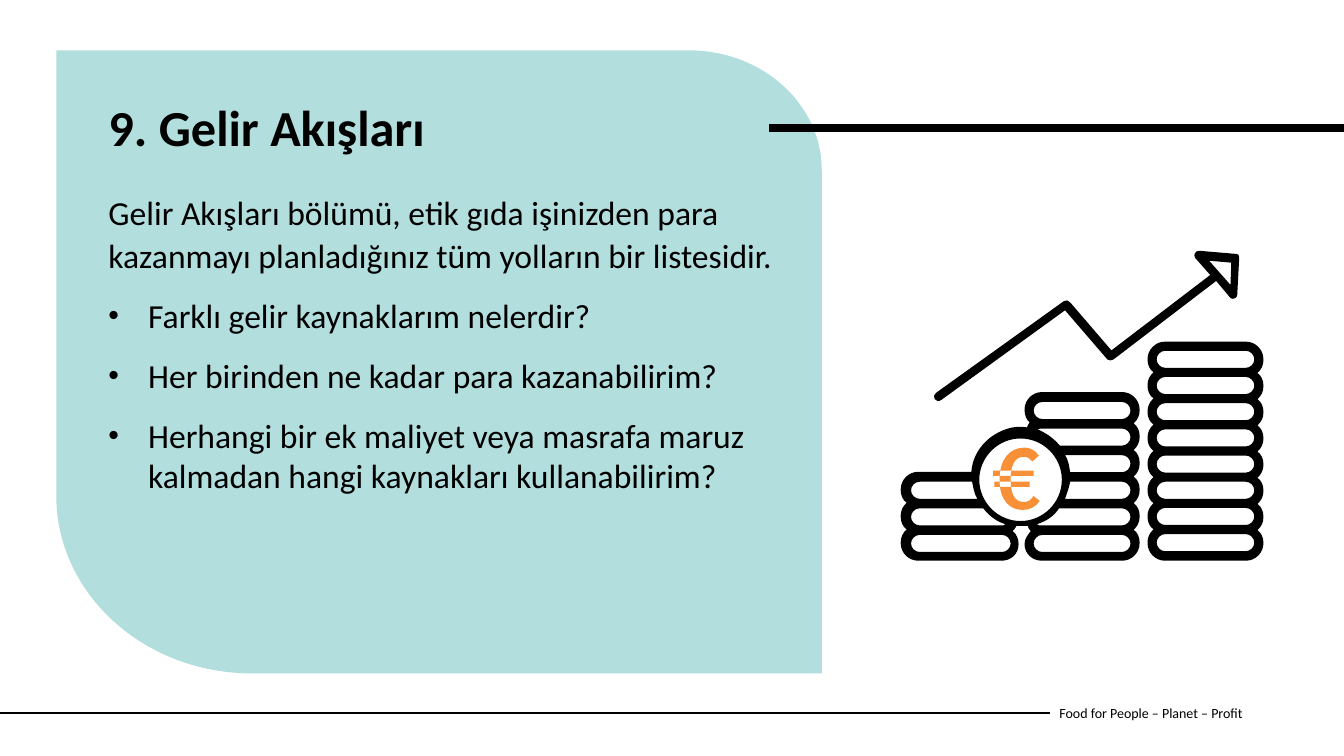
from lxml import etree
from pptx import Presentation
from pptx.dml.color import RGBColor
from pptx.enum.shapes import MSO_CONNECTOR as CONN
from pptx.enum.text import MSO_ANCHOR as ANCHOR, MSO_AUTO_SIZE as AUTO, PP_ALIGN as ALIGN
from pptx.oxml.ns import qn
from pptx.util import Cm, Pt

COLORS = {"ink": "000000", "panel": "B2DEDD", "euro": "F79037"}
FONT = "Calibri"
SLIDE_W, SLIDE_H = 33.87, 19.05
COIN_H, HOLE_H, HOLE_TOP = 0.9, 0.43, 0.25  # coins of the icon, cm

INTRO = ("Gelir Akışları bölümü, etik gıda işinizden para kazanmayı "
         "planladığınız tüm yolların bir listesidir.")
QUESTIONS = [
    "Farklı gelir kaynaklarım nelerdir?",
    "Her birinden ne kadar para kazanabilirim?",
    "Herhangi bir ek maliyet veya masrafa maruz kalmadan hangi kaynakları kullanabilirim?",
]


def rgb(name):
    return RGBColor.from_string(COLORS[name])


def shift(steps, dx, dy, sign=1):
    """Move steps; sign -1 also turns them by half a circle."""
    return [tuple(sign * v + (dy if i % 2 else dx) for i, v in enumerate(step))
            for step in steps]


def add_outline(slide, left, top, contours, color):
    """Contours hold (x, y) corners and (x1, y1, x2, y2, x, y) curves."""
    contours = [[tuple(Cm(v) for v in step) for step in shift(steps, left, top)]
                for steps in contours]
    fb = slide.shapes.build_freeform(*contours[0][0], scale=1.0)
    for i, steps in enumerate(contours):
        if i:
            fb.move_to(*steps[0])
        fb.add_line_segments([step[-2:] for step in steps[1:]], close=True)
    sp = fb.convert_to_shape()
    # Bend the segments that are curves
    nodes = list(sp._element.iter(qn("a:moveTo"), qn("a:lnTo")))
    for node, step in zip(nodes, sum(contours, [])):
        if len(step) == 6:
            node.tag = qn("a:cubicBezTo")
            for j in (0, 2):
                pt = etree.Element(qn("a:pt"), x=str(step[j] - sp.left),
                                   y=str(step[j + 1] - sp.top))
                node.insert(j // 2, pt)
    sp.shadow.inherit = False
    sp.fill.solid()
    sp.fill.fore_color.rgb = rgb(color)
    sp.line.fill.background()
    return sp


def place(sp, left, top, width, height):
    sp.left, sp.top, sp.width, sp.height = Cm(left), Cm(top), Cm(width), Cm(height)
    tf = sp.text_frame
    tf.word_wrap = True
    tf.auto_size = AUTO.NONE
    return tf


def add_text(p, text, size, bold=False):
    p.alignment = ALIGN.LEFT
    r = p.add_run()
    r.text = text
    r.font.name, r.font.size, r.font.bold = FONT, Pt(size), bold
    r.font.color.rgb = rgb("ink")


def set_bullet(p, char=None, indent=0):
    pPr = p._p.get_or_add_pPr()
    pPr.set("marL", str(Cm(indent)))
    pPr.set("indent", str(-Cm(indent)))
    if char:
        etree.SubElement(pPr, qn("a:buSzPct"), val="90000")
        etree.SubElement(pPr, qn("a:buFont"), typeface="Arial")
        etree.SubElement(pPr, qn("a:buChar"), char=char)
    else:
        etree.SubElement(pPr, qn("a:buNone"))


def add_footer(slide, left, top, width, height):
    sp = slide.shapes.add_textbox(0, 0, 0, 0)
    tf = place(sp, left, top, width, height)
    tf.vertical_anchor = ANCHOR.MIDDLE
    add_text(tf.paragraphs[0], "Food for People – Planet – Profit", 10)
    y = Cm(top + height / 2)
    rule = slide.shapes.add_connector(CONN.STRAIGHT, 0, y, Cm(left), y)
    rule.end_connect(sp, 1)
    rule.line.color.rgb = rgb("ink")
    rule.line.width = Pt(1.5)
    etree.SubElement(rule._element.spPr, qn("a:effectLst"))


def add_panel(slide, left, top, w, h):
    # Two opposite corners are rounded
    add_outline(slide, left, top, [[
        (w, h), (4.93, h), (2.21, h, 0, h - 2.01, 0, h - 4.47), (0, 0),
        (w - 3.35, 0), (w - 1.5, 0, w, 1.35, w, 3.02)]], "panel")
    # Bar running to the slide edge
    x, length = left + w - 1.29, SLIDE_W - left - w + 1.29
    bar = add_outline(slide, x, top + 1.9,
                      [[(0, 0), (length, 0), (length, 0.13), (0, 0.13)]], "ink")
    bar.line.color.rgb = rgb("ink")
    bar.line.width = Pt(1.93)
    etree.SubElement(bar.line._get_or_add_ln(), qn("a:miter"), lim="800000")


def add_content(slide, left, top, width):
    # Title
    tf = place(slide.shapes.title, left, top, 13.87, 2.1)
    tf.vertical_anchor = ANCHOR.TOP
    p = tf.paragraphs[0]
    p.line_spacing = 0.9
    add_text(p, "9. Gelir Akışları", 36, bold=True)
    # Introduction and questions
    tf = place(slide.placeholders[1], left, top + 2.17, width, 8.41)
    tf.vertical_anchor = ANCHOR.TOP
    p = tf.paragraphs[0]
    set_bullet(p)
    p.line_spacing, p.space_before, p.space_after = 1.07, Pt(0), Pt(8)
    add_text(p, INTRO, 24)
    for question in QUESTIONS:
        p = tf.add_paragraph()
        set_bullet(p, "•", 1)
        p.line_spacing, p.space_before, p.space_after = 1.0, Pt(6), Pt(8)
        add_text(p, question, 24)


def stack_side(count, pitch):
    """Left edge of a stack, downwards, with a notch between coins."""
    steps = [(0.44, 0), (0.2, 0, 0, 0.2, 0, 0.44)]
    for i in range(1, count):
        y = i * pitch
        steps += [(0, y - 0.2), (0, y - 0.08, 0.05, y + 0.04, 0.15, y + 0.11),
                  (0.05, y + 0.2, 0, y + 0.31, 0, y + 0.43)]
    y = (count - 1) * pitch
    return steps + [(0, y + 0.46), (0, y + 0.7, 0.2, y + COIN_H, 0.44, y + COIN_H)]


def coin_hole(x1, x2, top, left_end=None, right_end=None):
    h, r = HOLE_H, HOLE_H / 2
    cap = [(r, h), (0.1, h, 0, h - 0.1, 0, r), (0, 0.1, 0.1, 0, r, 0)]
    return shift((left_end or shift(cap, x1, 0))
                 + (right_end or shift(cap, x2, h, -1)), 0, top)


def tall_stack(x1, x2, top, count, pitch):
    side = stack_side(count, pitch)
    bottom = top + (count - 1) * pitch + COIN_H
    holes = [coin_hole(x1 + 0.23, x2 - 0.23, top + i * pitch + HOLE_TOP - 0.02)
             for i in range(count)]
    return [shift(side, x1, top) + shift(side, x2, bottom, -1)] + holes


def joined_stacks(top, pitch):
    """Three-coin and six-coin stacks with the round coin in front."""
    h, x2 = HOLE_H, 6.02
    low, bottom = top + 3 * pitch, top + 5 * pitch + COIN_H
    silhouette = [
        (5.58, top), (3.56, top), (3.32, top, 3.12, 3.76, 3.12, 4),
        (3.12, 4.14, 3.17, 4.27, 3.25, 4.32), (3.23, 4.35, 3.2, 4.4, 3.18, 4.45),
        (2.82, 4.39, 2.51, 4.52, 2.24, 4.72), (1.98, 4.93, 1.8, 5.23, 1.78, low)]
    silhouette += shift(stack_side(3, pitch), 0, low)
    silhouette += [
        (2.54, bottom), (2.77, bottom, 2.97, 7.65, 2.97, 7.39),
        (2.97, 7.26, 2.92, 7.14, 2.82, 7.06), (2.84, 7.04, 2.9, 6.99, 2.92, 6.93),
        (3.2, 6.93), (3.23, 6.99, 3.23, 7.04, 3.28, 7.06),
        (3.2, 7.16, 3.12, 7.26, 3.12, 7.39), (3.12, 7.62, 3.3, bottom, 3.56, bottom)]
    silhouette += shift(stack_side(6, pitch), x2, bottom, -1)
    # Hole ends cut off by the round coin, by coin number
    left_cuts = {
        1: [(4.01, h), (3.86, 0.25, 3.68, 0.12, 3.45, 0.02), (3.48, 0, 3.53, 0, 3.58, 0)],
        2: [(4.27, h), (4.24, 0.25, 4.22, 0.1, 4.14, 0)],
        3: [(4.14, h), (4.19, 0.3, 4.24, 0.15, 4.27, 0)],
        4: [(3.56, h), (3.51, h, 3.45, h, 3.43, 0.4), (3.66, 0.33, 3.86, 0.2, 3.99, 0)]}
    right_cuts = {
        3: [(1.8, 0), (1.83, 0.15, 1.85, 0.3, 1.93, h)],
        4: [(2.08, 0), (2.24, 0.2, 2.41, 0.33, 2.64, 0.4), (2.62, h, 2.57, h, 2.54, h)]}
    tops = [top + i * pitch + HOLE_TOP for i in range(6)]
    holes = [coin_hole(3.35, 5.79, y, left_end=left_cuts.get(i))
             for i, y in enumerate(tops)]
    holes += [coin_hole(0.26, 2.77, tops[i], right_end=right_cuts.get(i))
              for i in range(3, 6)]
    r, k = 1.04, 0.57
    half = [(0, -r), (k, -r, r, -k, r, 0), (r, k, k, r, 0, r)]
    face = shift(half + shift(half, 0, 0, -1)[1:], 3.02, 5.77)
    return [silhouette, face] + holes


def euro_sign():
    bars = [[(x1, y), (x2, y), (x2, y + 0.13), (x1, y + 0.13)]
            for x1, x2, y in [(-0.69, 0.33, -0.23), (-0.66, 0.23, 0.05)]]
    letter = [(-0.53, 0), (-0.53, -0.51, -0.28, -0.81, 0.1, -0.81),
              (0.23, -0.81, 0.38, -0.74, 0.46, -0.61), (0.3, -0.46),
              (0.23, -0.53, 0.18, -0.58, 0.08, -0.58),
              (-0.15, -0.58, -0.25, -0.36, -0.25, 0), (-0.25, 0.36, -0.15, 0.56, 0.08, 0.56),
              (0.2, 0.56, 0.25, 0.51, 0.33, 0.41), (0.48, 0.53),
              (0.38, 0.69, 0.23, 0.76, 0.05, 0.76), (-0.28, 0.76, -0.53, 0.51, -0.53, 0)]
    return bars + [letter]


def rising_arrow():
    return [[(4.27, 1.3), (4.22, 1.24, 4.17, 1.24, 4.11, 1.27), (0.89, 3.58),
             (0.76, 3.66, 0.89, 3.86, 1.02, 3.76), (4.14, 1.5), (5.21, 2.74),
             (5.26, 2.77, 5.31, 2.77, 5.36, 2.74), (7.95, 0.76), (8.31, 1.19),
             (8.36, 1.24, 8.48, 1.19, 8.48, 1.12), (8.53, 0.18),
             (8.53, 0.1, 8.51, 0.08, 8.46, 0.08), (7.52, 0),
             (7.42, 0, 7.37, 0.1, 7.42, 0.18), (7.8, 0.61), (5.31, 2.51)],
            [(7.77, 0.25), (8.33, 0.3), (8.31, 0.86)]]


def add_growth_icon(slide, left, top):
    add_outline(slide, left, top, tall_stack(6.22, 9.14, 2.29, 8, 0.66), "ink")
    add_outline(slide, left, top, rising_arrow(), "ink")
    add_outline(slide, left, top, joined_stacks(3.56, 0.67), "ink")
    add_outline(slide, left + 3.02, top + 5.77, euro_sign(), "euro")


def main():
    prs = Presentation()
    prs.slide_width, prs.slide_height = Cm(SLIDE_W), Cm(SLIDE_H)
    slide = prs.slides.add_slide(prs.slide_layouts[1])
    add_footer(slide, 26.45, 17.45, 6.93, 1.02)
    add_panel(slide, 1.42, 1.27, 19.29, 15.7)
    add_content(slide, 2.48, 2.46, 18.21)
    # Title and body lie above the panel
    for sp in list(slide.placeholders):
        slide.shapes._spTree.append(sp._element)
    add_growth_icon(slide, 22.7, 6.32)
    prs.save("out.pptx")


if __name__ == "__main__":
    main()
